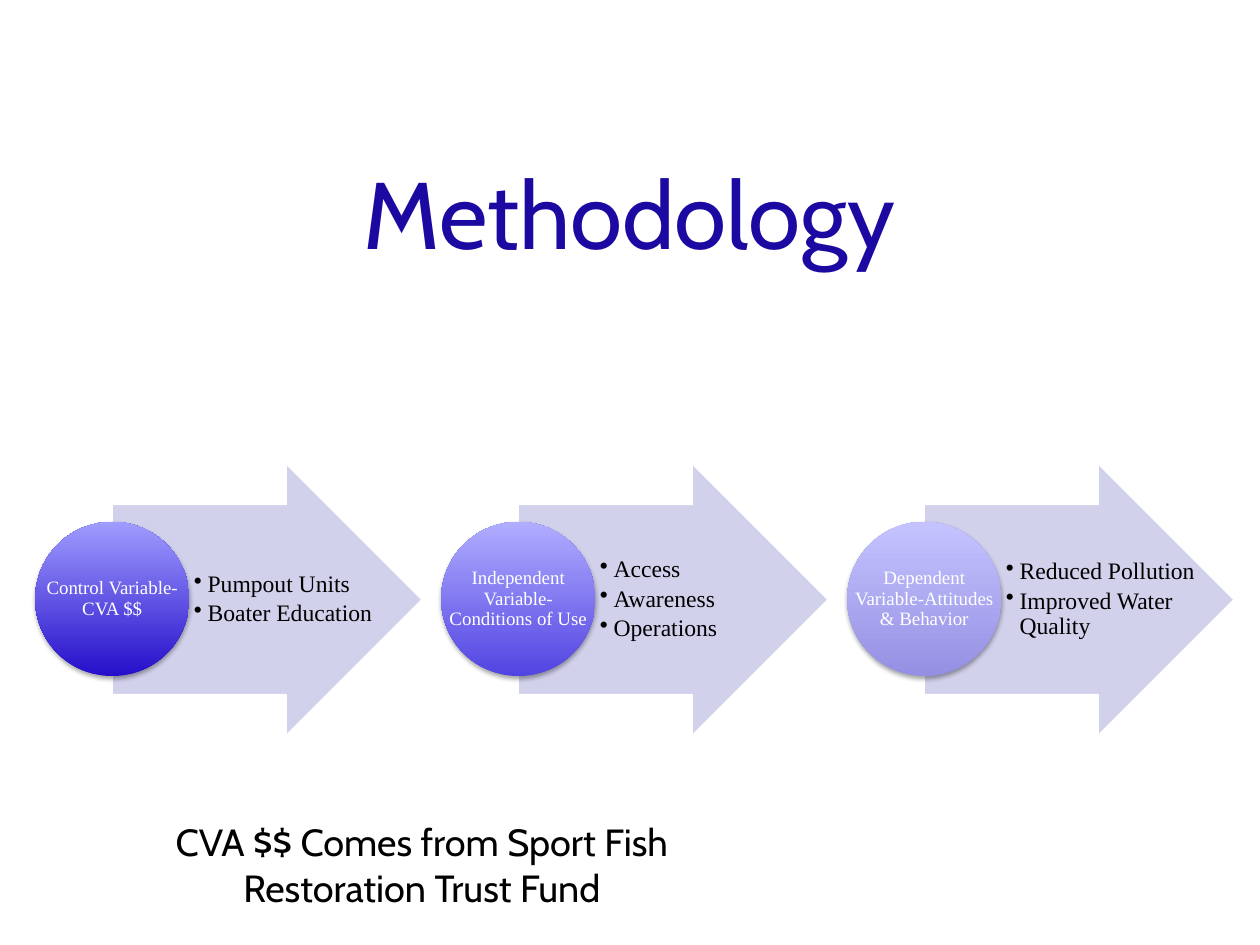
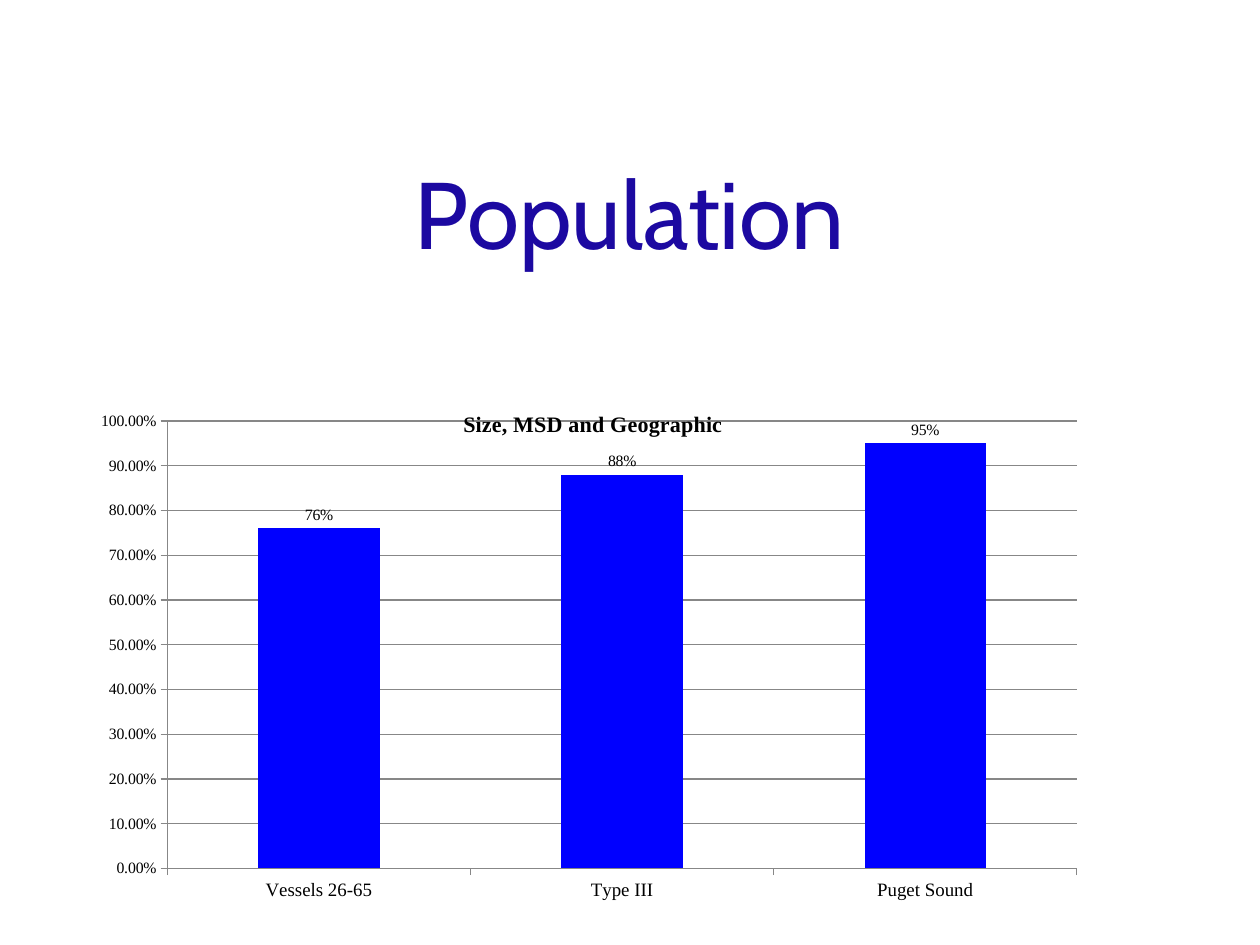
from dataclasses import dataclass
from typing import Any

from lxml import etree
from pptx import Presentation
from pptx import util as u
from pptx.chart import data
from pptx.dml.color import RGBColor
from pptx.enum import chart as charts
from pptx.enum import shapes, text
from pptx.oxml import ns
from pptx.slide import Slide

PX = 9144
COLORS = {
    "title": "1C09A1",
    "arrow": "CECDEB",
    "white": "FFFFFF",
    "black": "000000",
    "bar": "0000FF",
    "grid": "878787",
}
SERIF = "Times New Roman"
SANS = "Cabin"


@dataclass(frozen=True)
class Box:
    """A rectangle in px."""

    left: int
    top: int
    width: int
    height: int

    def emu(self) -> list[int]:
        """Return left, top, width and height in EMU."""
        return [side * PX for side in (self.left, self.top, self.width, self.height)]


@dataclass(frozen=True)
class Style:
    """The look of a block of text, with insets in px and sizes in points."""

    font: str
    size: int
    color: str
    insets: tuple[int, int, int, int] = (10, 5, 10, 5)
    align: Any = text.PP_ALIGN.CENTER
    anchor: Any = text.MSO_ANCHOR.MIDDLE
    line_spacing: float = 1.0
    space_after: float = 0
    bullet: bool = False


@dataclass(frozen=True)
class Variable:
    """A study variable: its circle label, gradient and bullet points."""

    label: str
    bottom: str
    top: str
    points: tuple[str, ...]


TITLE = Style(SANS, 60, "title", (4, 4, 4, 4), anchor=text.MSO_ANCHOR.BOTTOM)
CAPTION = Style(SANS, 24, "black", anchor=text.MSO_ANCHOR.TOP)
LABEL = Style(SERIF, 12, "white", (1, 1, 1, 1), line_spacing=0.9)
POINTS = Style(SERIF, 15, "black", (4, 1, 2, 1), text.PP_ALIGN.LEFT,
               line_spacing=0.9, space_after=2.5, bullet=True)

TITLE_BOX = Box(-6, -35, 1122, 276)
CAPTION_BOX = Box(72, 717, 600, 91)
CHART_BOX = Box(72, 338, 900, 495)
FIRST_LEFT, PITCH, CIRCLE, CIRCLE_TOP = 31, 358, 136, 460
ARROW_TOP, ARROW_WIDTH, ARROW_HEIGHT = 409, 273, 239
INDENT = 12

VARIABLES = (
    Variable("Control Variable-CVA $$", "250FCA", "A09CFF",
             ("Pumpout Units", "Boater Education")),
    Variable("Independent Variable-Conditions of Use", "5244E2", "B1ADFF",
             ("Access", "Awareness", "Operations")),
    Variable("Dependent Variable-Attitudes & Behavior", "9590E3", "C5C3FF",
             ("Reduced Pollution", "Improved Water Quality")),
)
POPULATION = {"Vessels 26-65": 0.76, "Type III": 0.88, "Puget Sound": 0.95}


def apply(target: Any, values: dict[str, Any]) -> None:
    """Set every named attribute on the target."""
    for name, value in values.items():
        setattr(target, name, value)


def rgb(name: str) -> RGBColor:
    """Return a named colour."""
    return RGBColor.from_string(COLORS[name])


def write(shape: Any, lines: tuple[str, ...], style: Style) -> None:
    """Fill a shape with one styled paragraph for each line."""
    frame = shape.text_frame
    left, top, right, bottom = (inset * PX for inset in style.insets)
    apply(frame, {
        "word_wrap": True, "auto_size": text.MSO_AUTO_SIZE.NONE,
        "vertical_anchor": style.anchor, "margin_left": left,
        "margin_top": top, "margin_right": right, "margin_bottom": bottom,
    })
    for index, line in enumerate(lines):
        paragraph = frame.add_paragraph() if index else frame.paragraphs[0]
        apply(paragraph, {
            "alignment": style.align, "line_spacing": style.line_spacing,
            "space_before": u.Pt(0), "space_after": u.Pt(style.space_after),
        })
        if style.bullet:
            properties = paragraph._p.get_or_add_pPr()
            properties.set("marL", str(INDENT * PX))
            properties.set("indent", str(-INDENT * PX))
            etree.SubElement(properties, ns.qn("a:buChar"), char="•")
        run = paragraph.add_run()
        run.text = line
        apply(run.font, {"name": style.font, "size": u.Pt(style.size)})
        run.font.color.rgb = rgb(style.color)


def add_text(slide: Slide, box: Box, lines: tuple[str, ...], style: Style) -> None:
    """Add a text box."""
    write(slide.shapes.add_textbox(*box.emu()), lines, style)


def add_titled_slide(presentation: Any, title: str) -> Slide:
    """Add a title-only slide with the shared title style."""
    slide = presentation.slides.add_slide(presentation.slide_layouts[5])
    placeholder = slide.shapes.title
    apply(placeholder, dict(zip(("left", "top", "width", "height"), TITLE_BOX.emu())))
    write(placeholder, (title,), TITLE)
    return slide


def add_arrow(slide: Slide, box: Box) -> None:
    """Add a pale, slightly transparent block arrow."""
    arrow = slide.shapes.add_shape(shapes.MSO_SHAPE.RIGHT_ARROW, *box.emu())
    arrow.shadow.inherit = False
    arrow.adjustments[0], arrow.adjustments[1] = 0.7, 0.5
    arrow.fill.solid()
    arrow.fill.fore_color.rgb = rgb("arrow")
    color = arrow._element.spPr.find(f".//{ns.qn('a:srgbClr')}")
    etree.SubElement(color, ns.qn("a:alpha"), val="90000")
    arrow.line.color.rgb = rgb("white")
    arrow.line.width = u.Pt(0.75)


def add_circle(slide: Slide, box: Box, variable: Variable) -> None:
    """Add a gradient circle with a soft shadow below."""
    circle = slide.shapes.add_shape(shapes.MSO_SHAPE.OVAL, *box.emu())
    circle.line.fill.background()
    circle.fill.gradient()
    circle.fill.gradient_angle = 90
    for stop, position, color in zip(circle.fill.gradient_stops, (0, 1),
                                     (variable.bottom, variable.top)):
        stop.position = position
        stop.color.rgb = RGBColor.from_string(color)
    circle.shadow.inherit = False
    effects = circle._element.spPr.find(ns.qn("a:effectLst"))
    shadow = etree.SubElement(
        effects, ns.qn("a:outerShdw"), blurRad=str(u.Pt(3.1)), dist=str(u.Pt(1.8)),
        dir="5400000", rotWithShape="0")
    color = etree.SubElement(shadow, ns.qn("a:srgbClr"), val=COLORS["black"])
    etree.SubElement(color, ns.qn("a:alpha"), val="35000")


def add_variable(slide: Slide, left: int, variable: Variable) -> None:
    """Add an arrow with bullet points and its labelled circle."""
    arrow_left = left + CIRCLE // 2
    add_arrow(slide, Box(arrow_left, ARROW_TOP, ARROW_WIDTH, ARROW_HEIGHT))
    points_box = Box(left + CIRCLE, ARROW_TOP, ARROW_WIDTH - CIRCLE // 2, ARROW_HEIGHT)
    add_text(slide, points_box, variable.points, POINTS)
    circle_box = Box(left, CIRCLE_TOP, CIRCLE, CIRCLE)
    add_circle(slide, circle_box, variable)
    add_text(slide, circle_box, (variable.label,), LABEL)


def set_layout(parent: Any, before: str, values: dict[str, Any]) -> None:
    """Give a chart part a manual layout placed before the named child."""
    for old in parent.findall(ns.qn("c:layout")):
        parent.remove(old)
    layout = etree.Element(ns.qn("c:layout"))
    manual = etree.SubElement(layout, ns.qn("c:manualLayout"))
    for name, value in values.items():
        etree.SubElement(manual, ns.qn(f"c:{name}"), val=str(value))
    parent.find(ns.qn(before)).addprevious(layout)


def add_population_chart(slide: Slide) -> None:
    """Add the column chart of population shares."""
    chart_data = data.CategoryChartData(number_format="0%")
    chart_data.categories = list(POPULATION)
    chart_data.add_series("Series 1", list(POPULATION.values()))
    chart = slide.shapes.add_chart(
        charts.XL_CHART_TYPE.COLUMN_CLUSTERED, *CHART_BOX.emu(), chart_data).chart
    apply(chart, {"has_legend": False, "has_title": True})
    apply(chart.font, {"name": SERIF, "size": u.Pt(10)})
    chart.font.color.rgb = rgb("black")

    title = chart.chart_title
    title.text_frame.text = "Size, MSD and Geographic"
    title_font = title.text_frame.paragraphs[0].runs[0].font
    apply(title_font, {"name": SERIF, "size": u.Pt(14), "bold": True})
    title_font.color.rgb = rgb("black")
    title._element.find(ns.qn("c:overlay")).set("val", "1")
    corner = {"xMode": "edge", "yMode": "edge"}
    set_layout(title._element, "c:overlay", {**corner, "x": 0.37, "y": 0.04})
    plot_area = chart._chartSpace.chart.plotArea
    set_layout(plot_area, "c:barChart", {
        "layoutTarget": "inner", **corner, "x": 0.084, "y": 0.067, "w": 0.891, "h": 0.797})

    plot = chart.plots[0]
    apply(plot, {"gap_width": 150, "vary_by_categories": False, "has_data_labels": True})
    apply(plot.data_labels, {
        "show_value": True, "number_format": "0%", "number_format_is_linked": False,
        "position": charts.XL_LABEL_POSITION.OUTSIDE_END,
    })
    bars = plot.series[0].format
    bars.fill.solid()
    bars.fill.fore_color.rgb = rgb("bar")
    bars.line.fill.background()

    value_axis, category_axis = chart.value_axis, chart.category_axis
    apply(value_axis, {"minimum_scale": 0, "maximum_scale": 1, "major_unit": 0.1,
                       "has_major_gridlines": True})
    apply(value_axis.tick_labels, {"number_format": "0.00%",
                                   "number_format_is_linked": False})
    category_axis.tick_labels.font.size = u.Pt(12)
    for axis in (value_axis, category_axis):
        axis.major_tick_mark = charts.XL_TICK_MARK.OUTSIDE
    for part in (value_axis, category_axis, value_axis.major_gridlines):
        part.format.line.color.rgb = rgb("grid")
        part.format.line.width = u.Pt(0.75)


def main() -> None:
    """Build and save the presentation."""
    presentation = Presentation()
    apply(presentation, {"slide_width": 1111 * PX, "slide_height": 833 * PX})
    methodology = add_titled_slide(presentation, "Methodology")
    for index, variable in enumerate(VARIABLES):
        add_variable(methodology, FIRST_LEFT + index * PITCH, variable)
    add_text(methodology, CAPTION_BOX,
             ("CVA $$ Comes from Sport Fish Restoration Trust Fund",), CAPTION)
    add_population_chart(add_titled_slide(presentation, "Population"))
    presentation.save("out.pptx")


if __name__ == "__main__":
    main()
